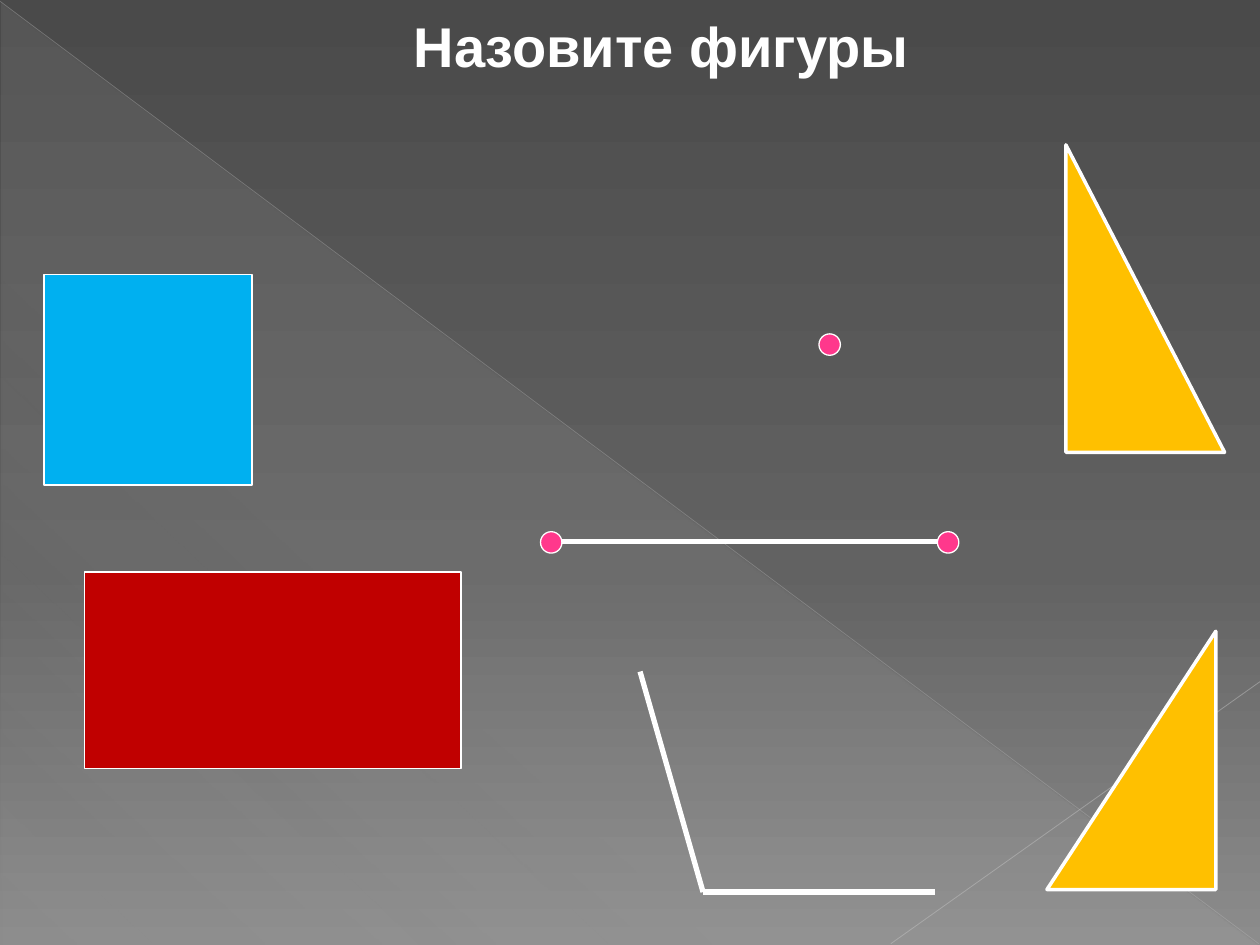
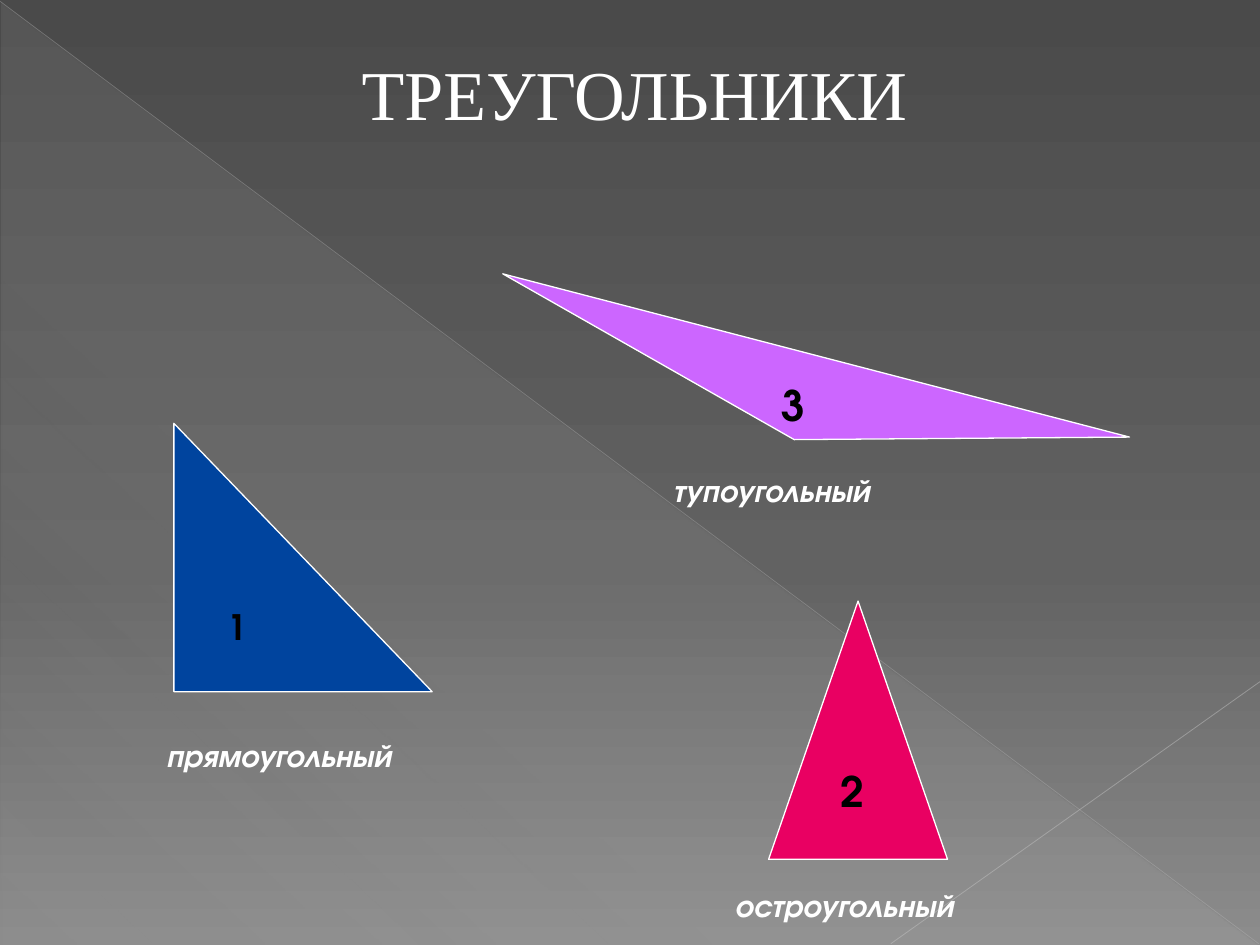
from dataclasses import dataclass

from lxml.etree import SubElement
from pptx import Presentation
from pptx.dml.color import RGBColor as Color
from pptx.enum.shapes import MSO_CONNECTOR as Link, MSO_SHAPE as Form
from pptx.enum.text import MSO_ANCHOR as Anchor, MSO_AUTO_SIZE as AutoSize, PP_ALIGN as Align
from pptx.oxml.ns import qn
from pptx.util import Inches, Pt


@dataclass(frozen=True)
class Theme:
    white: str = "FFFFFF"
    black: str = "000000"
    blue: str = "00449E"
    sky: str = "00B0F0"
    red: str = "C00000"
    pink: str = "FF388C"
    amber: str = "FFC000"
    violet: str = "CC66FF"
    crimson: str = "E90062"
    backdrop: tuple = ((0, "4A4A4A", 100), (60, "626262", 100), (100, "8C8C8C", 100))
    beam: tuple = ((0, "D2D2D2", 10), (70, "D2D2D2", 8), (100, "D2D2D2", 1))
    beam_edge: str = "BFBFBF"
    corner_edge: str = "C6C6C6"
    sans: str = "Arial"
    serif: str = "Times New Roman"
    label: str = "TeX Gyre Adventor"
    question_size: int = 32
    heading_size: int = 40
    caption_size: int = 18
    thin: float = 0.75
    outline: float = 2
    stroke: float = 3


theme = Theme()


def write_text(box, text, *, font, size, color=theme.white, bold=False,
               italic=False, align=Align.LEFT, wrap=True, top_margin=0.05):
    frame = box.text_frame
    frame.auto_size = AutoSize.NONE
    frame.word_wrap = wrap
    frame.vertical_anchor = Anchor.TOP
    frame.margin_top = Inches(top_margin)
    para = frame.paragraphs[0]
    para.alignment = align
    span = para.add_run()
    span.text = text
    span.font.name = font
    span.font.size = Pt(size)
    span.font.bold = bold
    span.font.italic = italic
    span.font.color.rgb = Color.from_string(color)


def draw_line(page, start, end, color=theme.white, width=theme.stroke, opacity=100):
    line = page.shapes.add_connector(Link.STRAIGHT, *map(Inches, start + end))
    line.line.color.rgb = Color.from_string(color)
    line.line.width = Pt(width)
    properties = line.element.spPr
    if opacity < 100:
        for tint in properties.iter(qn("a:srgbClr")):
            SubElement(tint, qn("a:alpha"), val=str(opacity * 1000))
    SubElement(properties, qn("a:effectLst"))
    return line


deck = Presentation()
deck.slide_width = Inches(10)
deck.slide_height = Inches(7.5)
master = deck.slide_master
title_only = deck.slide_layouts[5]
figures_page = deck.slides.add_slide(title_only)
triangles_page = deck.slides.add_slide(title_only)

beam = figures_page.shapes.add_shape(
    Form.RIGHT_TRIANGLE, *map(Inches, (0.01, 0.02, 9.98, 7.48)))
beam.shadow.inherit = False
beam.line.fill.background()

for owner, fill, stops, angle in (
    (master, master.background.fill, theme.backdrop, 90),
    (beam, beam.fill, theme.beam, 133),
):
    fill.gradient()
    fill.gradient_angle = 360 - angle
    stop_list = owner.element.xpath(".//a:gsLst")[0]
    for old_stop in list(stop_list):
        stop_list.remove(old_stop)
    for position, color, opacity in stops:
        stop = SubElement(stop_list, qn("a:gs"), pos=str(position * 1000))
        tint = SubElement(stop, qn("a:srgbClr"), val=color)
        if opacity < 100:
            SubElement(tint, qn("a:alpha"), val=str(opacity * 1000))

beam_edge = draw_line(figures_page, (0, 0.01), (9.99, 7.49), theme.beam_edge, 0.39, 35)
corner_edge = draw_line(figures_page, (10, 5.41), (7.07, 7.49), theme.corner_edge, 0.47, 45)
for order, band in enumerate((beam, beam_edge, corner_edge)):
    band.element.xpath(".//p:cNvPr")[0].set("id", str(100 + order))
    master.shapes.element.insert(2 + order, band.element)

for page, text, place, style in (
    (figures_page, "Назовите фигуры", (0.5, 0, 9.5, 0.94),
     dict(font=theme.sans, size=theme.question_size, bold=True, top_margin=0.09)),
    (triangles_page, "ТРЕУГОЛЬНИКИ", (1.53, 0.28, 7.01, 1.26),
     dict(font=theme.serif, size=theme.heading_size, wrap=False, top_margin=0.12)),
):
    title = page.shapes.title
    title.left, title.top, title.width, title.height = map(Inches, place)
    write_text(title, text, align=Align.CENTER, **style)

segment_start, segment_end = (4.37, 4.3), (7.45, 4.3)
angle_vertex = (5.58, 7.08)
for start, end in (
    (segment_start, segment_end),
    ((5.08, 5.33), angle_vertex),
    (angle_vertex, (7.42, 7.08)),
):
    draw_line(figures_page, start, end)

dot = 0.17
for page, form, place, color, width, flipped, rotation in (
    (figures_page, Form.RECTANGLE, (0.67, 4.54, 2.99, 1.56), theme.red, theme.thin, False, 0),
    (figures_page, Form.RECTANGLE, (0.35, 2.18, 1.65, 1.67), theme.sky, theme.thin, False, 0),
    (figures_page, Form.OVAL, (4.29, 4.22, dot, dot), theme.pink, theme.thin, False, 0),
    (figures_page, Form.OVAL, (7.44, 4.22, dot, dot), theme.pink, theme.thin, False, 0),
    (figures_page, Form.OVAL, (6.5, 2.65, dot, dot), theme.pink, theme.thin, False, 0),
    (figures_page, Form.RIGHT_TRIANGLE, (8.46, 1.15, 1.26, 2.44), theme.amber, theme.outline, False, 0),
    (figures_page, Form.RIGHT_TRIANGLE, (8.31, 5.01, 1.34, 2.05), theme.amber, theme.outline, True, 0),
    (triangles_page, Form.RIGHT_TRIANGLE, (1.38, 3.36, 2.05, 2.13), theme.blue, theme.thin, False, 0),
    (triangles_page, Form.ISOSCELES_TRIANGLE, (3.82, 2.81, 5.14, 0.69), theme.violet, theme.thin, False, 194.6),
    (triangles_page, Form.ISOSCELES_TRIANGLE, (6.1, 4.77, 1.42, 2.05), theme.crimson, theme.thin, False, 0),
):
    figure = page.shapes.add_shape(form, *map(Inches, place))
    figure.shadow.inherit = False
    figure.fill.solid()
    figure.fill.fore_color.rgb = Color.from_string(color)
    figure.line.color.rgb = Color.from_string(theme.white)
    figure.line.width = Pt(width)
    figure.rotation = rotation
    if flipped:
        figure.element.spPr.find(qn("a:xfrm")).set("flipH", "1")

number = dict(color=theme.black)
caption = dict(size=theme.caption_size, italic=True)
for text, place, style in (
    ("1", (1.71, 4.76, 0.38, 0.43), dict(number, size=20)),
    ("3", (6.1, 2.96, 0.52, 0.5), dict(number, size=24)),
    ("2", (6.57, 6.03, 0.39, 0.5), dict(number, size=24)),
    ("прямоугольный", (1.22, 5.79, 2.28, 0.4), caption),
    ("тупоугольный", (5.24, 3.69, 3.23, 0.4), caption),
    ("остроугольный", (5.73, 6.98, 2.58, 0.4), caption),
):
    box = triangles_page.shapes.add_textbox(*map(Inches, place))
    write_text(box, text, font=theme.label, bold=True, **style)

deck.save("out.pptx")
